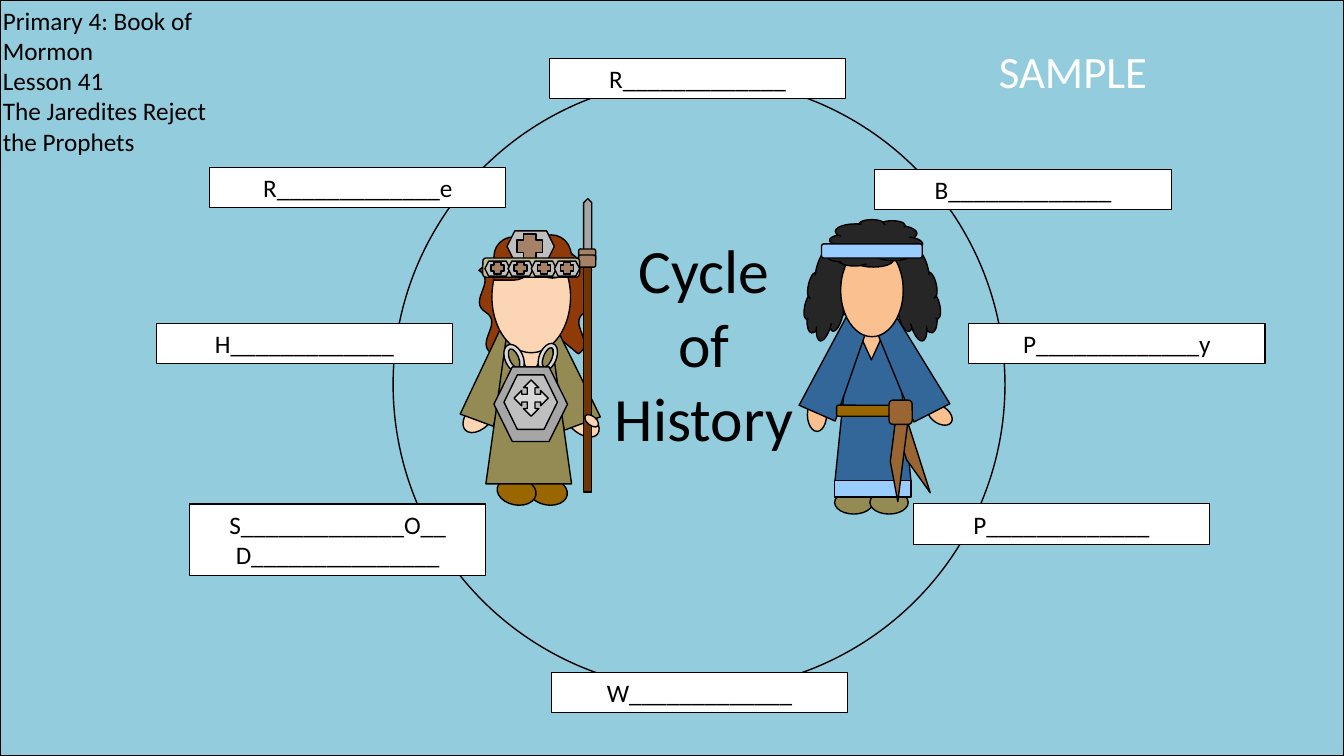
from pptx import Presentation
from pptx import util as u
from pptx.dml.color import RGBColor
from pptx.enum import shapes, text

KIND = shapes.MSO_SHAPE
OVAL, BOX, ROUND_BOX = KIND.OVAL, KIND.RECTANGLE, KIND.ROUNDED_RECTANGLE
HEXAGON, CROSS, TRAPEZOID = KIND.HEXAGON, KIND.CROSS, KIND.TRAPEZOID
ROBE, CLOUD = KIND.FLOWCHART_MANUAL_OPERATION, KIND.CLOUD
CM_PER_INCH = 2.54
FONT = "Calibri"

COLORS = {
    "black": "000000", "white": "FFFFFF", "sky": "93CDDD",
    "auburn": "913A09", "fair": "FCD5B5", "tan": "FAC090", "olive": "948A54",
    "ochre": "996600", "silver": "D9D9D9", "steel": "A6A6A6", "gray": "BFBFBF",
    "wood": "6F3505", "bronze": "A58267", "sand": "C4BD97", "hair": "262626",
    "denim": "336699", "light blue": "99CCFF", "leather": "996633",
}

LESSON = ["Primary 4: Book of Mormon", "Lesson 41", "The Jaredites Reject the Prophets"]
CYCLE_TITLE = ["Cycle", "of History"]

# Blanks of the cycle, clockwise from the top: left, top (inches), lines
CARD_WIDTH, CARD_HEIGHT, EXTRA_LINE = 2.94, 0.4, 0.31
BLANK = "_" * 13
CARDS = [
    (5.45, 0.58, ["R" + BLANK]),
    (8.68, 1.68, ["B" + BLANK]),
    (9.61, 3.21, ["P" + BLANK + "y"]),
    (9.06, 5.00, ["P" + BLANK]),
    (5.47, 6.67, ["W" + BLANK]),
    (1.88, 5.00, ["S" + BLANK + "O__", "D" + BLANK + "__"]),
    (1.55, 3.21, ["H" + BLANK]),
    (2.08, 1.66, ["R" + BLANK + "e"]),
]

# Figure parts from back to front: kind, color, (left, top, width, height), options
WAVY, LEAF = (0.107, 0.1), (0.5, 0)
WARRIOR = [
    (KIND.DOUBLE_WAVE, "auburn", (4.45, 2.74, 1.05, 0.45), {"turn": 80.9, "adjust": WAVY}),
    (KIND.DOUBLE_WAVE, "auburn", (5.12, 2.74, 1.05, 0.45),
     {"turn": 279.1, "adjust": WAVY, "mirrored": True}),
    (OVAL, "fair", (4.56, 4.01, 0.39, 0.24), {"turn": 315.1}),
    (OVAL, "fair", (5.58, 4.07, 0.39, 0.23), {"turn": 38.7}),
    (TRAPEZOID, "olive", (4.73, 3.19, 0.35, 1.01), {"turn": 20.3}),
    (TRAPEZOID, "olive", (5.43, 3.32, 0.38, 0.91), {"turn": 339.7}),
    (OVAL, "ochre", (5.24, 4.74, 0.39, 0.27), {"turn": 10.8}),
    (OVAL, "ochre", (4.93, 4.74, 0.39, 0.27), {"turn": 10.8}),
    (TRAPEZOID, "olive", (4.82, 3.28, 0.85, 1.52), {}),
    (KIND.ISOSCELES_TRIANGLE, "fair", (5.13, 3.46, 0.28, 0.29), {"turn": 180}),
    (OVAL, "fair", (4.88, 2.39, 0.78, 1.11), {}),
    (KIND.ROUND_2_DIAG_RECTANGLE, "auburn", (4.9, 2.35, 0.39, 0.43), {"adjust": LEAF}),
    (KIND.ROUND_2_DIAG_RECTANGLE, "auburn", (5.26, 2.35, 0.43, 0.39),
     {"turn": 74.8, "adjust": LEAF}),
    (OVAL, "auburn", (4.79, 2.5, 0.45, 0.19), {"turn": 315.4, "line": None}),
    (OVAL, "auburn", (5.42, 2.54, 0.45, 0.19), {"turn": 43.1, "line": None}),
    (KIND.DONUT, "silver", (5.01, 3.41, 0.18, 0.29), {"turn": 336.4}),
    (KIND.DONUT, "silver", (5.35, 3.4, 0.17, 0.29), {"turn": 22.5}),
    (HEXAGON, "steel", (4.9, 3.64, 0.73, 0.74), {}),
    (HEXAGON, "gray", (5, 3.72, 0.53, 0.54), {}),
    (KIND.QUAD_ARROW, "silver", (5.1, 3.77, 0.34, 0.36), {}),
    (KIND.PENTAGON, "steel", (5.55, 2.21, 0.56, 0.08), {"turn": 270}),
    (BOX, "wood", (5.79, 2.53, 0.08, 2.35), {}),
    (ROUND_BOX, "bronze", (5.74, 2.47, 0.17, 0.12), {}),
    (ROUND_BOX, "bronze", (5.74, 2.53, 0.17, 0.12), {}),
    (OVAL, "fair", (5.79, 4.13, 0.16, 0.09), {"turn": 38.7}),
    (HEXAGON, "gray", (5.03, 2.29, 0.47, 0.31), {}),
    (CROSS, "bronze", (5.13, 2.32, 0.25, 0.25), {}),
    (ROUND_BOX, "sand", (4.79, 2.56, 0.96, 0.19), {}),
]
STUD_COUNT, STUD_LEFT, STUD_STEP = 4, 4.81, 0.23

PROPHET = [
    (OVAL, "tan", (9.24, 3.98, 0.17, 0.27), {"turn": 304}),
    (OVAL, "olive", (8.28, 4.87, 0.38, 0.23), {}),
    (OVAL, "olive", (8.63, 4.87, 0.38, 0.23), {}),
    (CLOUD, "hair", (8.8, 2.41, 0.5, 0.98), {"turn": 347.3, "mirrored": True}),
    (OVAL, "tan", (8.01, 3.95, 0.19, 0.33), {}),
    (ROBE, "denim", (8.28, 3.31, 0.76, 1.49), {"turn": 180}),
    (BOX, "light blue", (8.28, 4.77, 0.76, 0.16), {}),
    (KIND.FLOWCHART_EXTRACT, "tan", (8.48, 3.21, 0.33, 0.36), {"turn": 180}),
    (ROBE, "denim", (8.11, 3.15, 0.39, 0.99), {"turn": 203.6}),
    (ROBE, "denim", (8.82, 3.16, 0.4, 0.99), {"turn": 153}),
    (CLOUD, "hair", (8.01, 2.41, 0.46, 0.98), {"turn": 12.7}),
    (OVAL, "tan", (8.34, 2.42, 0.62, 0.92), {}),
    (CLOUD, "hair", (8.44, 1.94, 0.47, 0.95), {"turn": 270, "mirrored": True}),
    (ROUND_BOX, "light blue", (8.15, 2.42, 1, 0.14), {}),
    (ROUND_BOX, "ochre", (8.3, 4.02, 0.7, 0.11), {}),
    (KIND.DIAGONAL_STRIPE, "leather", (8.97, 4.08, 0.26, 0.81), {"turn": 324.5}),
    (KIND.DIAGONAL_STRIPE, "leather", (8.83, 4.15, 0.26, 0.81), {"turn": 349.4}),
    (ROUND_BOX, "leather", (8.82, 3.97, 0.23, 0.24), {}),
]


def to_cm(inches):
    return u.Cm(inches * CM_PER_INCH)


def rgb(name):
    return RGBColor.from_string(COLORS[name])


def draw(kind, color, area, turn=0, mirrored=False, adjust=(), line=1):
    """Add a preset shape; color or line None leaves that part out."""
    part = slide.shapes.add_shape(kind, *map(to_cm, area))
    part.shadow.inherit = False
    part.rotation = turn
    for index, value in enumerate(adjust):
        part.adjustments[index] = value
    if mirrored:
        part._element.spPr.xfrm.set("flipH", "1")
    if color:
        part.fill.solid()
        part.fill.fore_color.rgb = rgb(color)
    else:
        part.fill.background()
    if line:
        part.line.color.rgb = rgb("black")
        part.line.width = u.Pt(line)
    else:
        part.line.fill.background()
    return part


def write(holder, lines, size=18, color="black", align=text.PP_ALIGN.LEFT):
    frame = holder.text_frame
    frame.word_wrap = True
    frame.auto_size = text.MSO_AUTO_SIZE.NONE
    frame.vertical_anchor = text.MSO_ANCHOR.TOP
    frame.text = "\n".join(lines)
    for paragraph in frame.paragraphs:
        paragraph.alignment = align
        for run in paragraph.runs:
            run.font.name = FONT
            run.font.size = u.Pt(size)
            run.font.color.rgb = rgb(color)


deck = Presentation()
deck.slide_width, deck.slide_height = to_cm(13.333), to_cm(7.5)
slide = deck.slides.add_slide(deck.slide_layouts[5])

draw(BOX, "sky", (0, 0, 13.333, 7.5))
draw(OVAL, None, (3.9, 0.78, 6.07, 6.07))
for left, top, lines in CARDS:
    height = CARD_HEIGHT + EXTRA_LINE * (len(lines) - 1)
    card = draw(BOX, "white", (left, top, CARD_WIDTH, height), line=0.75)
    write(card, lines, align=text.PP_ALIGN.CENTER)

cycle = slide.shapes.title
cycle.left, cycle.top, cycle.width, cycle.height = map(to_cm, (5.81, 2.25, 2.35, 2.32))
write(cycle, CYCLE_TITLE, size=44, align=text.PP_ALIGN.CENTER)
slide.shapes._spTree.append(cycle._element)  # in front of the circle, behind the figures

studs = []
for index in range(STUD_COUNT):
    stud_left = STUD_LEFT + index * STUD_STEP
    studs += [(HEXAGON, "gray", (stud_left, 2.59, 0.25, 0.15), {}),
              (CROSS, "bronze", (stud_left + 0.06, 2.6, 0.13, 0.12), {})]
for kind, color, area, options in WARRIOR + studs + PROPHET:
    draw(kind, color, area, **options)

lesson = slide.shapes.add_textbox(*map(to_cm, (-0.07, 0, 2.26, 2.22)))
write(lesson, LESSON)
sample = slide.shapes.add_textbox(*map(to_cm, (9.81, 0.38, 1.69, 0.64)))
write(sample, ["SAMPLE"], size=32, color="white")

deck.save("out.pptx")
